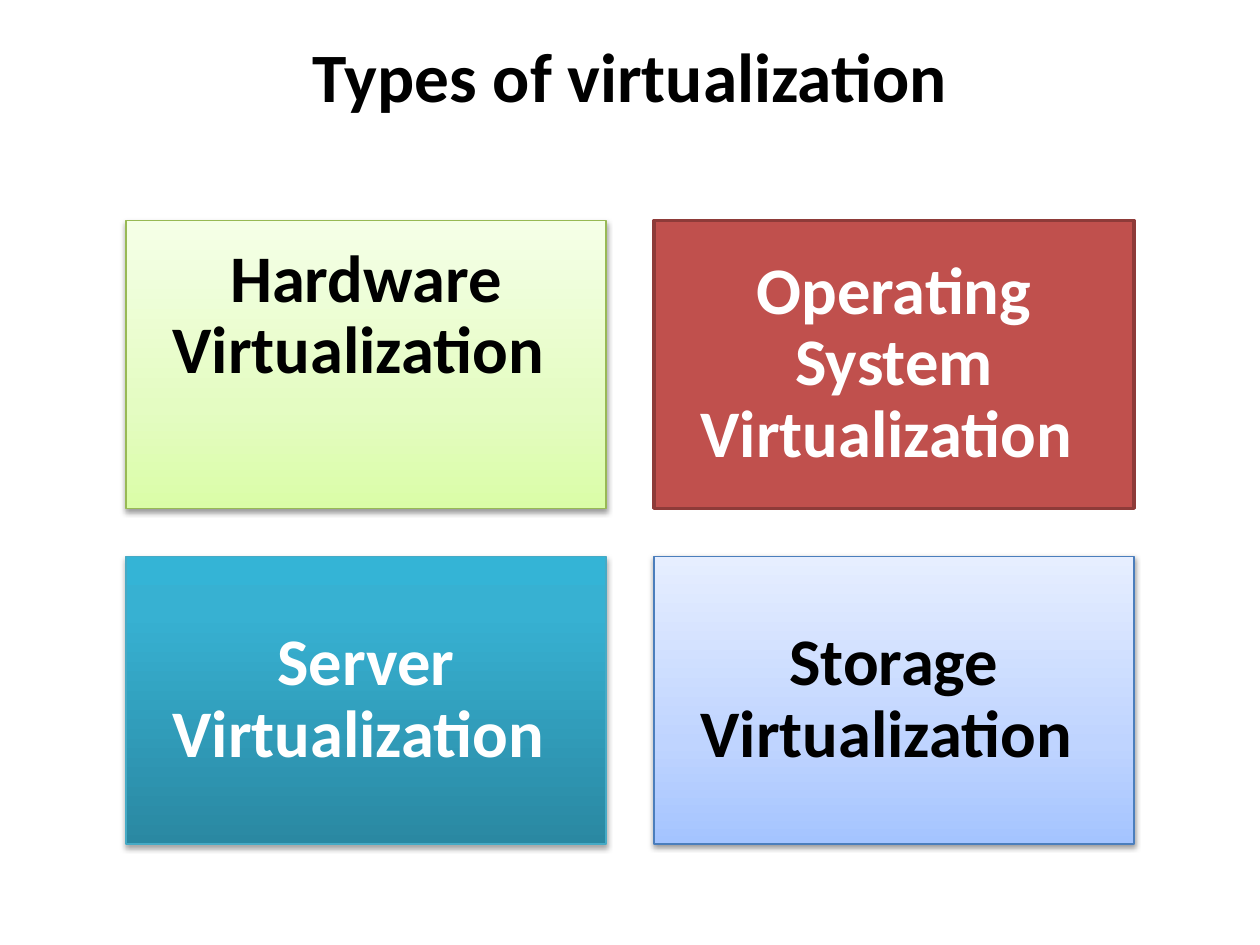
import copy

import pptx
import pptx.dml.color
import pptx.enum.shapes
import pptx.enum.text
import pptx.oxml
import pptx.oxml.ns
import pptx.util

Inches = pptx.util.Inches
Pt = pptx.util.Pt
qn = pptx.oxml.ns.qn

COLORS = {
    "dark": "000000",
    "light": "FFFFFF",
    "red": "C0504D",
    "red_edge": "8E3B39",
    "green_edge": "98B955",
    "teal_edge": "46AAC5",
    "blue_edge": "4B7EBC",
}
GRADIENTS = {
    "green": [(0, "DAFDA7"), (0.35, "E4FCC2"), (1, "F5FFE7")],
    "teal": [(0, "2A88A2"), (0.8, "37B1D2"), (1, "34B4D6")],
    "blue": [(0, "A4C4FF"), (0.35, "BFD4FF"), (1, "E6EEFF")],
}
SOFT_SHADOW = {"alpha": 38, "blur": 3.1, "distance": 1.6}
SERVER_SHADOW = {"alpha": 35, "blur": 3.1, "distance": 1.8}
INSET = 0.16
TYPES = [
    {"label": "Hardware Virtualization ", "fill": "green", "edge": "green_edge",
     "ink": "dark", "shadow": SOFT_SHADOW, "bottom": 0.92},
    {"label": "Operating System Virtualization ", "fill": "red", "edge": "red_edge",
     "ink": "light", "edge_width": 2},
    {"label": "Server Virtualization ", "fill": "teal", "edge": "teal_edge",
     "ink": "light", "shadow": SERVER_SHADOW},
    {"label": "Storage Virtualization ", "fill": "blue", "edge": "blue_edge",
     "ink": "dark", "shadow": SOFT_SHADOW},
]


def rgb(value):
    return pptx.dml.color.RGBColor.from_string(value)


def apply_format(target, values):
    for name, value in values.items():
        setattr(target, name, value)


def write_text(holder, text, size, ink, margins, paragraph_format):
    frame = holder.text_frame
    apply_format(frame, {
        "word_wrap": True,
        "vertical_anchor": pptx.enum.text.MSO_ANCHOR.MIDDLE,
        **margins,
    })
    paragraph = frame.paragraphs[0]
    apply_format(paragraph, {
        "alignment": pptx.enum.text.PP_ALIGN.CENTER, **paragraph_format,
    })
    run = paragraph.add_run()
    run.text = text
    apply_format(run.font, {"name": "Calibri", "size": Pt(size), "bold": True})
    run.font.color.rgb = rgb(COLORS[ink])


def fill_gradient(tile, stops):
    tile.fill.gradient()
    tile.fill.gradient_angle = 90
    stop_list = tile._element.spPr.find(".//" + qn("a:gsLst"))
    stop_list.append(copy.deepcopy(stop_list[0]))
    for stop, (position, color) in zip(tile.fill.gradient_stops, stops):
        stop.position = position
        stop.color.rgb = rgb(color)


def add_shadow(tile, alpha, blur, distance):
    effects = tile._element.spPr.find(qn("a:effectLst"))
    effects.append(pptx.oxml.parse_xml(
        '<a:outerShdw xmlns:a="http://schemas.openxmlformats.org/drawingml/2006/main"'
        f' blurRad="{Pt(blur)}" dist="{Pt(distance)}" dir="5400000" rotWithShape="0">'
        f'<a:srgbClr val="{COLORS["dark"]}"><a:alpha val="{alpha * 1000}"/></a:srgbClr>'
        '</a:outerShdw>'
    ))


def add_title(slide, left, top, width, height):
    title = slide.shapes.add_textbox(
        Inches(left), Inches(top), Inches(width), Inches(height))
    margins = {"margin_top": 0, "margin_bottom": Inches(0.67)}
    write_text(title, " Types of virtualization ", 39.6, "dark", margins, {})


def add_type_tile(slide, kind, left, top, width, height):
    tile = slide.shapes.add_shape(
        pptx.enum.shapes.MSO_SHAPE.RECTANGLE,
        Inches(left), Inches(top), Inches(width), Inches(height))
    tile.shadow.inherit = False
    if kind["fill"] in GRADIENTS:
        fill_gradient(tile, GRADIENTS[kind["fill"]])
    else:
        tile.fill.solid()
        tile.fill.fore_color.rgb = rgb(COLORS[kind["fill"]])
    tile.line.color.rgb = rgb(COLORS[kind["edge"]])
    tile.line.width = Pt(kind.get("edge_width", 0.75))
    if "shadow" in kind:
        add_shadow(tile, **kind["shadow"])
    margins = {f"margin_{side}": Inches(INSET) for side in ("left", "top", "right")}
    margins["margin_bottom"] = Inches(kind.get("bottom", INSET))
    write_text(tile, kind["label"], 38, kind["ink"], margins, {"line_spacing": 0.9})


def add_type_grid(slide, left, top, width, height):
    gap = 0.38
    tile_width = (width - gap) / 2
    tile_height = (height - gap) / 2
    for index, kind in enumerate(TYPES):
        row, column = divmod(index, 2)
        add_type_tile(
            slide, kind,
            left + column * (tile_width + gap),
            top + row * (tile_height + gap),
            tile_width, tile_height)


def main():
    presentation = pptx.Presentation()
    apply_format(presentation, {"slide_width": Inches(10), "slide_height": Inches(7.5)})
    slide = presentation.slides.add_slide(presentation.slide_layouts[6])
    add_title(slide, 0.5, 0.3, 9, 1.25)
    add_type_grid(slide, 1, 1.75, 8, 4.95)
    presentation.save("out.pptx")


if __name__ == "__main__":
    main()
